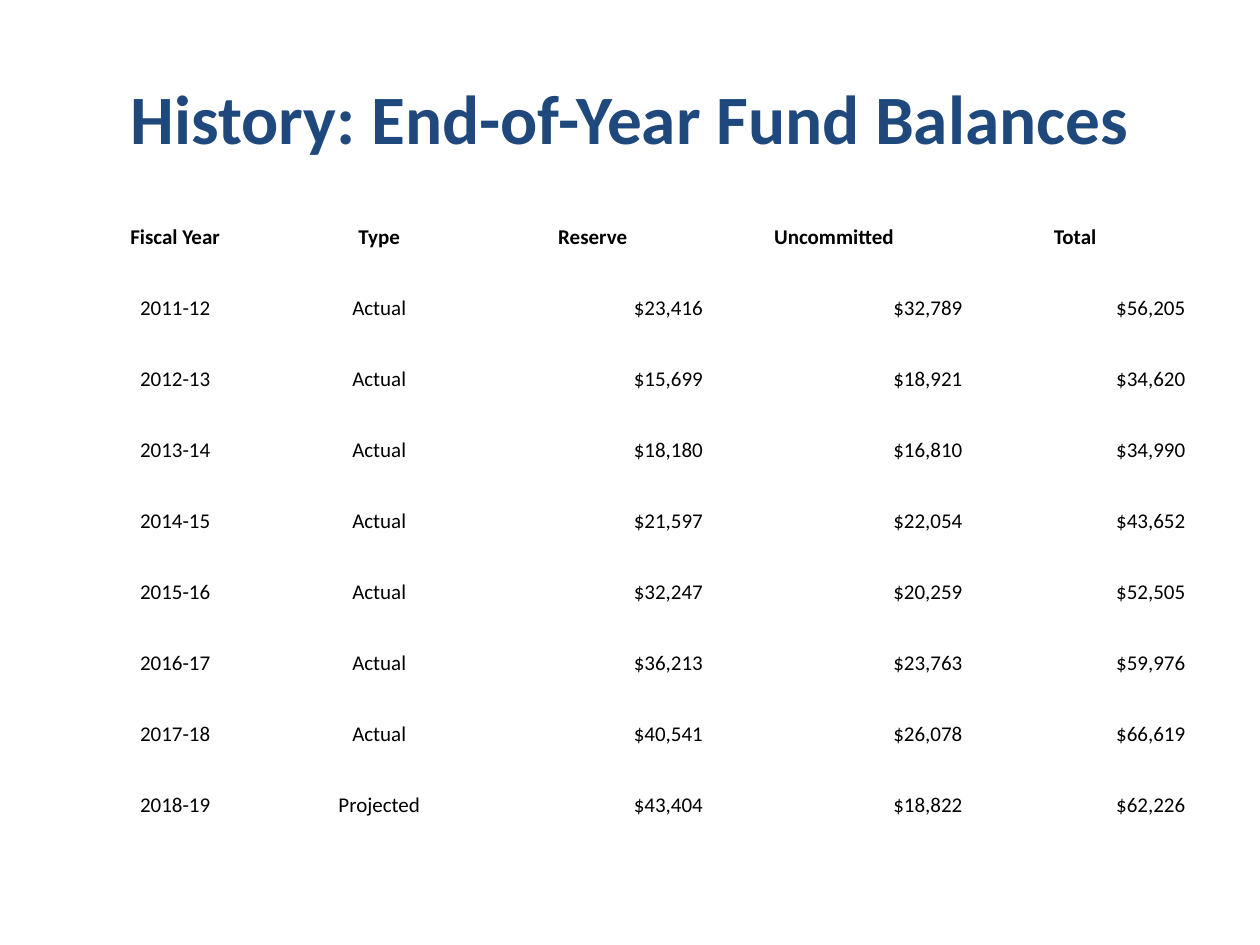
from pptx import Presentation
from pptx.dml.color import RGBColor
from pptx.enum.text import MSO_ANCHOR, MSO_AUTO_SIZE, PP_ALIGN
from pptx.util import Pt

COLORS = {"title": "1F497D", "text": "000000"}
HEADINGS = ["Fiscal Year", "Type", "Reserve", "Uncommitted", "Total"]
BALANCES = [
    ["2011-12", "Actual", "$23,416", "$32,789", "$56,205"],
    ["2012-13", "Actual", "$15,699", "$18,921", "$34,620"],
    ["2013-14", "Actual", "$18,180", "$16,810", "$34,990"],
    ["2014-15", "Actual", "$21,597", "$22,054", "$43,652"],
    ["2015-16", "Actual", "$32,247", "$20,259", "$52,505"],
    ["2016-17", "Actual", "$36,213", "$23,763", "$59,976"],
    ["2017-18", "Actual", "$40,541", "$26,078", "$66,619"],
    ["2018-19", "Projected", "$43,404", "$18,822", "$62,226"],
]
COLUMN_WIDTHS = [116.6, 116.6, 127.4, 148.3, 127.4]
ROW_HEIGHT = 40.64


class FundSlide:
    """Holds the text style and the current page."""

    font_name = "Calibri"

    def __init__(self, page):
        self.page = page

    def set_text(self, frame, text, size, color, bold, align):
        para = frame.paragraphs[0]
        para.text = text
        para.alignment = align
        para.font.name = self.font_name
        para.font.size = Pt(size)
        para.font.bold = bold
        para.font.color.rgb = RGBColor.from_string(COLORS[color])

    def title(self, text, left, top, width, height):
        box = self.page.shapes.title
        box.left, box.top = Pt(left), Pt(top)
        box.width, box.height = Pt(width), Pt(height)
        frame = box.text_frame
        frame.word_wrap = True
        frame.auto_size = MSO_AUTO_SIZE.NONE
        frame.vertical_anchor = MSO_ANCHOR.MIDDLE
        self.set_text(frame, text, 39.6, "title", True, PP_ALIGN.CENTER)

    def table(self, rows, left, top):
        table = self.page.shapes.add_table(
            len(rows), len(COLUMN_WIDTHS), Pt(left), Pt(top),
            Pt(sum(COLUMN_WIDTHS)), Pt(ROW_HEIGHT * len(rows))).table
        table.horz_banding = False
        for column, width in zip(table.columns, COLUMN_WIDTHS):
            column.width = Pt(width)
        for row_index, values in enumerate(rows):
            table.rows[row_index].height = Pt(ROW_HEIGHT)
            for column_index, value in enumerate(values):
                self.cell(table.cell(row_index, column_index), value, row_index == 0)

    def cell(self, cell, value, is_heading):
        cell.fill.background()
        cell.vertical_anchor = MSO_ANCHOR.BOTTOM
        cell.margin_left = cell.margin_right = cell.margin_top = Pt(0.75)
        cell.margin_bottom = Pt(0)
        # Amounts line up on the right, everything else is centred
        align = PP_ALIGN.RIGHT if value.startswith("$") else PP_ALIGN.CENTER
        self.set_text(cell.text_frame, value, 12, "text", is_heading, align)


def main():
    deck = Presentation()
    deck.slide_width, deck.slide_height = Pt(720), Pt(540)
    slide = FundSlide(deck.slides.add_slide(deck.slide_layouts[5]))

    # Heading
    slide.title("History: End-of-Year Fund Balances", 36, 21.6, 648, 90)

    # Balances by fiscal year
    slide.table([HEADINGS] + BALANCES, 41.8, 102.2)

    deck.save("out.pptx")


if __name__ == "__main__":
    main()
